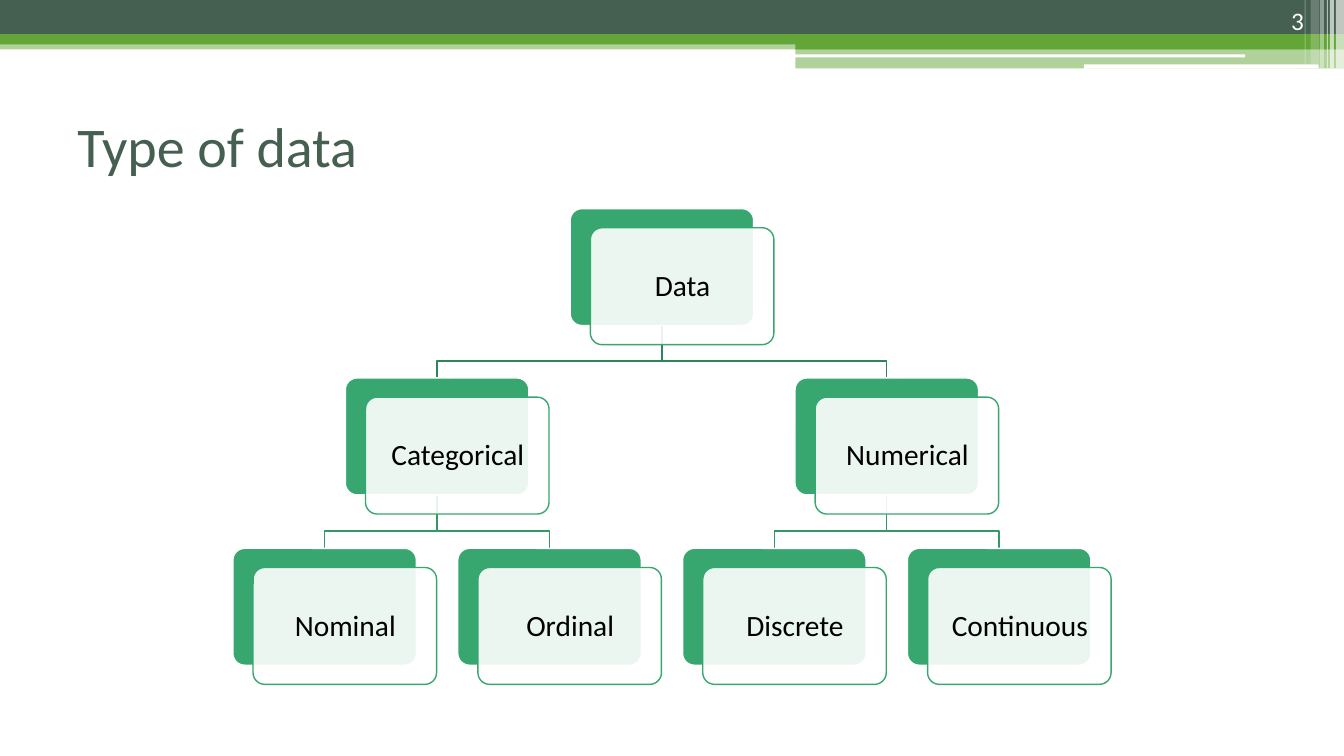
from lxml import etree
from pptx import Presentation
from pptx.dml.color import RGBColor
from pptx.enum.shapes import MSO_SHAPE as SHAPE
from pptx.enum.text import MSO_ANCHOR as ANCHOR, PP_ALIGN as ALIGN
from pptx.oxml.ns import qn
from pptx.util import Inches, Pt

prs = Presentation()
prs.slide_width, prs.slide_height = Inches(13.33), Inches(7.5)
s = prs.slides.add_slide(prs.slide_layouts[6])


def paint(fill, color, alpha=100):
    fill.solid()
    fill.fore_color.rgb = RGBColor.from_string(color)
    if alpha < 100:
        rgb = next(fill._xPr.iter(qn("a:srgbClr")))
        etree.SubElement(rgb, qn("a:alpha")).set("val", str(alpha * 1000))


def add_text(box, text, size, color, align, anchor, inset=(0.1, 0.05)):
    tf = s.shapes.add_textbox(*map(Inches, box)).text_frame
    x, y = map(Inches, inset)
    frame = {"word_wrap": True, "vertical_anchor": anchor, "margin_left": x,
             "margin_right": x, "margin_top": y, "margin_bottom": y}
    for name, value in frame.items():
        setattr(tf, name, value)
    p = tf.paragraphs[0]
    p.alignment = align
    r = p.add_run()
    r.text = text
    for name, value in {"size": Pt(size), "name": "Calibri"}.items():
        setattr(r.font, name, value)
    paint(r.font.fill, color)
    return p


# Header bands and the fading stripes at the right edge
RECT, ROUND = SHAPE.RECTANGLE, SHAPE.ROUNDED_RECTANGLE
header = [
    (RECT, 0, 0.4, 13.33, 0.09, "63A537", 50),
    (RECT, 0, 0, 13.33, 0.34, "455F51", 100),
    (RECT, 0, 0.34, 13.33, 0.1, "63A537", 100),
    (RECT, 7.89, 0.39, 5.44, 0.1, "63A537", 100),
    (RECT, 7.89, 0.48, 5.44, 0.2, "63A537", 50),
    (ROUND, 7.88, 0.54, 4.47, 0.03, "FFFFFF", 100),
    (ROUND, 10.75, 0.64, 2.33, 0.04, "FFFFFF", 100),
    (RECT, 13.25, 0, 0.08, 0.68, "FFFFFF", 65),
    (RECT, 13.19, 0, 0.04, 0.68, "FFFFFF", 65),
    (RECT, 13.16, 0, 0.01, 0.68, "FFFFFF", 60),
    (RECT, 13.09, 0, 0.04, 0.68, "FFFFFF", 40),
    (RECT, 13, 0, 0.08, 0.64, "FFFFFF", 20),
    (RECT, 12.94, 0, 0.01, 0.64, "FFFFFF", 30),
]
for kind, x, y, w, h, color, alpha in header:
    sp = s.shapes.add_shape(kind, *map(Inches, (x, y, w, h)))
    sp.shadow.inherit = False
    paint(sp.fill, color, alpha)
    sp.line.fill.background()

# Title
add_text((0.67, 0.85, 12, 1.17), "Type of data", 40, "455F51", ALIGN.LEFT, ANCHOR.MIDDLE)

# Tree: label -> (column, level, parent)
tree = {
    "Data": (1.5, 0, None),
    "Categorical": (0.5, 1, "Data"),
    "Nominal": (0, 2, "Categorical"),
    "Ordinal": (1, 2, "Categorical"),
    "Numerical": (2.5, 1, "Data"),
    "Discrete": (2, 2, "Numerical"),
    "Continuous": (3, 2, "Numerical"),
}
NODE_W, NODE_H = 1.82, 1.16
LEVEL_TOPS = (2.07, 3.75, 5.44)
LINK_COLORS = (None, "2C8659", "329865")
spots = {label: (2.31 + 2.23 * col, LEVEL_TOPS[level])
         for label, (col, level, parent) in tree.items()}

# Elbow links, behind the nodes
for label, (col, level, parent) in tree.items():
    if parent is None:
        continue
    x, y = spots[label]
    px, py = spots[parent]
    start, end = px + NODE_W / 2, x + NODE_W / 2
    bend = y - 0.17
    route = [(start, py + NODE_H), (start, bend), (end, bend), (end, y)]
    points = [(Inches(a), Inches(b)) for a, b in route]
    path = s.shapes.build_freeform(*points[0])
    path.add_line_segments(points[1:], close=False)
    link = path.convert_to_shape()
    link.shadow.inherit = False
    link.fill.background()
    paint(link.line.fill, LINK_COLORS[level])
    link.line.width = Pt(1)

# Nodes: green card, translucent white card in front, label
cards = [(0, 0, "37A76F", 100, "FFFFFF"), (0.2, 0.19, "FFFFFF", 90, "37A76F")]
for label, (x, y) in spots.items():
    for dx, dy, color, alpha, edge in cards:
        card = s.shapes.add_shape(ROUND, *map(Inches, (x + dx, y + dy, NODE_W, NODE_H)))
        card.adjustments[0] = 0.1
        card.shadow.inherit = False
        paint(card.fill, color, alpha)
        paint(card.line.fill, edge)
        card.line.width = Pt(1)
    p = add_text((x + 0.24, y + 0.23, 1.75, 1.09), label, 21, "000000",
                 ALIGN.CENTER, ANCHOR.MIDDLE, (0.09, 0.09))
    p.line_spacing = 0.9

# Slide number
add_text((11.92, 0, 1.11, 0.4), "3", 18, "FFFFFF", ALIGN.RIGHT, ANCHOR.BOTTOM)

prs.save("out.pptx")
